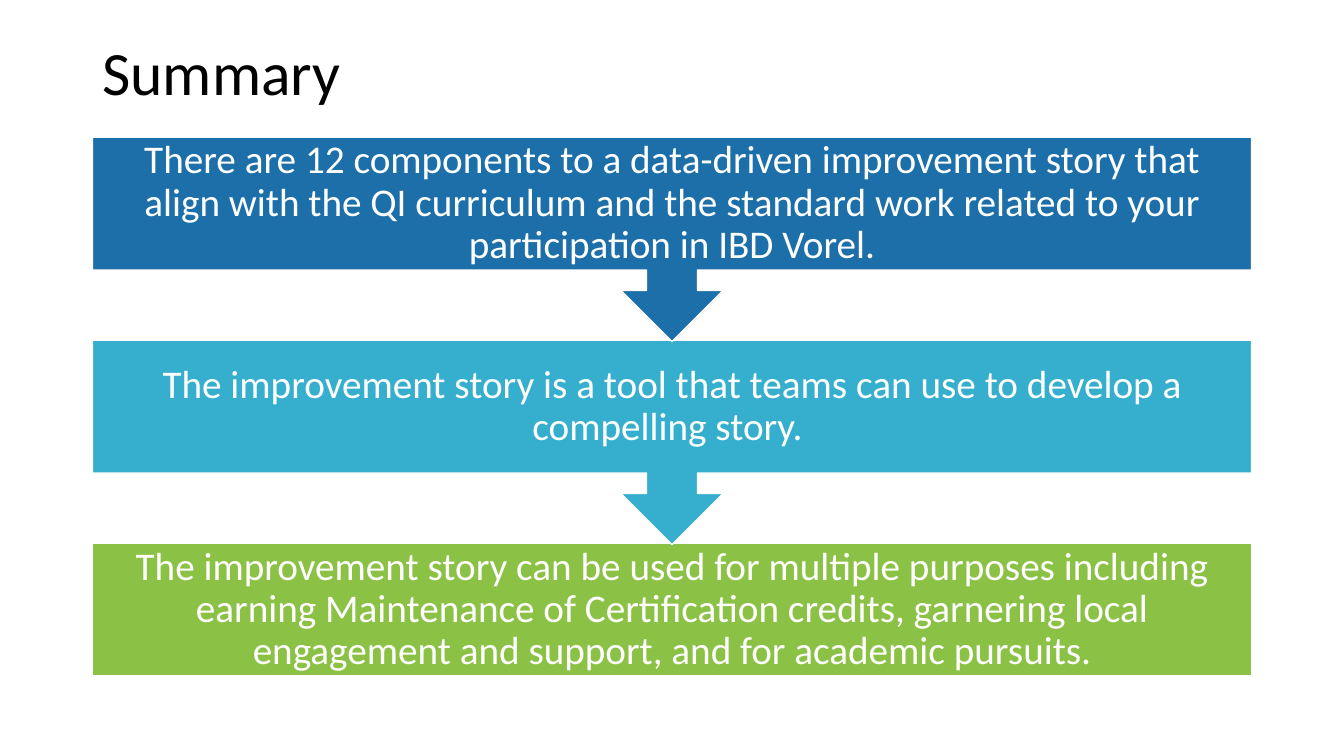
from dataclasses import dataclass

import pptx
import pptx.dml.color
import pptx.enum.shapes
import pptx.enum.text
import pptx.presentation
import pptx.slide
import pptx.text.text
import pptx.util

Pt = pptx.util.Pt
RGBColor = pptx.dml.color.RGBColor
Shape = pptx.enum.shapes.MSO_SHAPE
Align = pptx.enum.text.PP_ALIGN
Anchor = pptx.enum.text.MSO_ANCHOR

BLACK = RGBColor(0x00, 0x00, 0x00)
WHITE = RGBColor(0xFF, 0xFF, 0xFF)
BLUE = RGBColor(0x1D, 0x6F, 0xA9)
TEAL = RGBColor(0x36, 0xAF, 0xCE)
GREEN = RGBColor(0x8B, 0xC1, 0x45)

LEFT, WIDTH = 66, 828
FIRST_TOP, PITCH = 98, 145
BOX_HEIGHT, CALLOUT_HEIGHT = 95, 146


@dataclass(frozen=True)
class Step:
    text: str
    color: RGBColor


STEPS = [
    Step("There are 12 components to a data-driven improvement story that align with "
         "the QI curriculum and the standard work related to your participation in "
         "IBD Vorel.", BLUE),
    Step("The improvement story is a tool that teams can use to develop a compelling "
         "story. ", TEAL),
    Step("The improvement story can be used for multiple purposes including earning "
         "Maintenance of Certification credits, garnering local engagement and "
         "support, and for academic pursuits.", GREEN),
]


def apply_format(target: object, values: dict[str, object]) -> None:
    for name, value in values.items():
        setattr(target, name, value)


def write_text(frame: pptx.text.text.TextFrame, text: str, size: float,
               color: RGBColor, align: Align, side: float, edge: float) -> None:
    apply_format(frame, {
        "word_wrap": True, "vertical_anchor": Anchor.MIDDLE,
        "margin_left": Pt(side), "margin_right": Pt(side),
        "margin_top": Pt(edge), "margin_bottom": Pt(edge),
    })
    para = frame.paragraphs[0]
    apply_format(para, {"alignment": align, "line_spacing": 0.9})
    span = para.add_run()
    span.text = text
    apply_format(span.font, {"name": "Calibri", "size": Pt(size)})
    span.font.color.rgb = color


def add_title(page: pptx.slide.Slide, text: str) -> None:
    box = page.shapes.add_textbox(Pt(LEFT), Pt(2), Pt(WIDTH), Pt(104.5))
    write_text(box.text_frame, text, 44, BLACK, Align.LEFT, 7.2, 3.6)


def add_step(page: pptx.slide.Slide, step: Step, top: float, is_last: bool) -> None:
    kind = Shape.RECTANGLE if is_last else Shape.DOWN_ARROW_CALLOUT
    height = BOX_HEIGHT if is_last else CALLOUT_HEIGHT
    box = page.shapes.add_shape(kind, Pt(LEFT), Pt(top), Pt(WIDTH), Pt(height))
    box.shadow.inherit = False
    box.fill.solid()
    box.fill.fore_color.rgb = step.color
    box.line.color.rgb = WHITE
    box.line.width = Pt(1)
    write_text(box.text_frame, step.text, 28, WHITE, Align.CENTER, 16, 0)


def main() -> None:
    deck = pptx.Presentation()
    apply_format(deck, {"slide_width": Pt(960), "slide_height": Pt(540)})
    page = deck.slides.add_slide(deck.slide_layouts[6])
    add_title(page, "Summary")
    last = len(STEPS) - 1
    for index, step in reversed(list(enumerate(STEPS))):
        add_step(page, step, FIRST_TOP + index * PITCH, index == last)
    deck.save("out.pptx")


if __name__ == "__main__":
    main()
